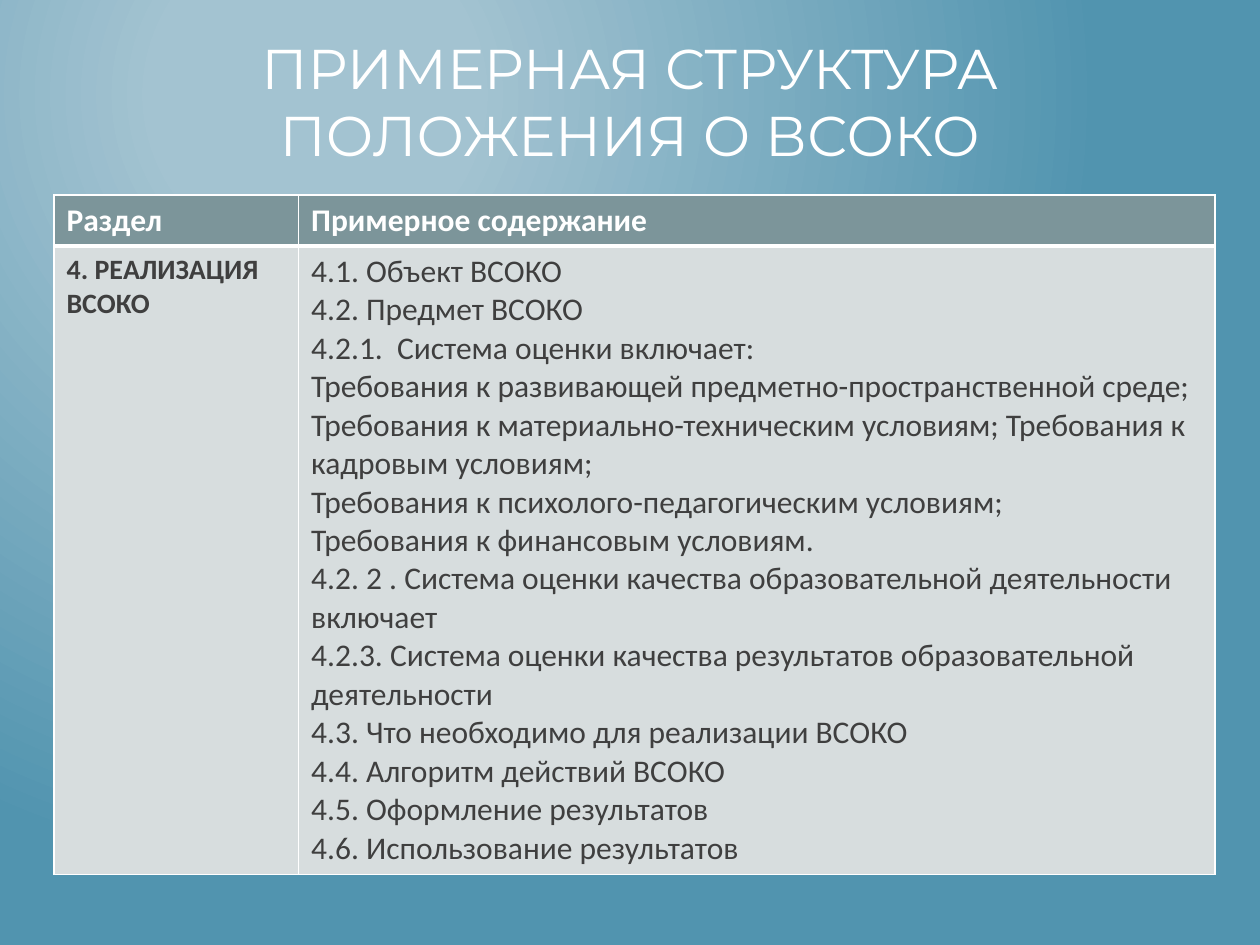
"""Builds a slide with a title and a table outlining one section of a regulation."""
from pptx import Presentation
from pptx.dml.color import RGBColor
from pptx.enum.text import MSO_ANCHOR, MSO_AUTO_SIZE, PP_ALIGN
from pptx.oxml import parse_xml
from pptx.oxml.ns import nsdecls
from pptx.util import Cm, Pt

COLORS = {
    "white": "FFFFFF",
    "header": "7C959A",
    "body": "D7DDDE",
    "text": "3F3F3F",
    "glow": "A3C3D1",
    "edge": "5194AF",
}
HEADERS = ["Раздел", "Примерное содержание"]
SECTION = ["4. РЕАЛИЗАЦИЯ ", "ВСОКО"]
CONTENTS = [
    "4.1. Объект ВСОКО",
    "4.2. Предмет ВСОКО",
    "4.2.1.  Система оценки включает:",
    "Требования к развивающей предметно-пространственной среде;",
    "Требования к материально-техническим условиям; Требования к кадровым условиям;",
    "Требования к психолого-педагогическим условиям;",
    "Требования к финансовым условиям.",
    "4.2. 2 . Система оценки качества образовательной деятельности включает",
    "4.2.3. Система оценки качества результатов образовательной деятельности",
    "4.3. Что необходимо для реализации ВСОКО",
    "4.4. Алгоритм действий ВСОКО",
    "4.5. Оформление результатов",
    "4.6. Использование результатов",
]


def write(tf, lines, size, color, font="Calibri", bold=False, align=PP_ALIGN.LEFT):
    for i, line in enumerate(lines):
        p = tf.add_paragraph() if i else tf.paragraphs[0]
        p.alignment = align
        r = p.add_run()
        r.text = line
        r.font.size = Pt(size)
        r.font.name = font
        r.font.bold = bold
        r.font.color.rgb = RGBColor.from_string(COLORS[color])


def style_cell(cell, fill, bottom):
    cell.fill.solid()
    cell.fill.fore_color.rgb = RGBColor.from_string(COLORS[fill])
    tc_pr = cell._tc.get_or_add_tcPr()
    widths = {"lnL": 1, "lnR": 1, "lnT": 1, "lnB": bottom}
    for i, (tag, width) in enumerate(widths.items()):
        tc_pr.insert(i, parse_xml(
            f'<a:{tag} {nsdecls("a")} w="{Pt(width)}"><a:solidFill>'
            f'<a:srgbClr val="{COLORS["white"]}"/></a:solidFill></a:{tag}>'))


prs = Presentation()
prs.slide_width, prs.slide_height = Cm(25.4), Cm(19.05)
s = prs.slides.add_slide(prs.slide_layouts[5])

s.background.fill.gradient()
grad = s.element.xpath(".//p:bg//a:gradFill")[0]
grad.getparent().replace(grad, parse_xml(
    f'<a:gradFill {nsdecls("a")} rotWithShape="1"><a:gsLst>'
    f'<a:gs pos="20000"><a:srgbClr val="{COLORS["glow"]}"/></a:gs>'
    f'<a:gs pos="100000"><a:srgbClr val="{COLORS["edge"]}"/></a:gs></a:gsLst>'
    '<a:path path="circle"><a:fillToRect l="50000" t="20000" r="100000" b="100000"/>'
    '</a:path></a:gradFill>'))

sp = s.shapes.title
sp.left, sp.top, sp.width, sp.height = Cm(0.9), Cm(0.53), Cm(23.6), Cm(3)
tf = sp.text_frame
tf.word_wrap = True
tf.auto_size = MSO_AUTO_SIZE.NONE
tf.vertical_anchor = MSO_ANCHOR.MIDDLE
write(tf, ["ПРИМЕРНАЯ СТРУКТУРА ПОЛОЖЕНИЯ О ВСОКО"], 32, "white",
      font="Montserrat", align=PP_ALIGN.CENTER)

table = s.shapes.add_table(2, 2, Cm(1.09), Cm(3.93), Cm(23.4), Cm(13.69)).table
for column, width in zip(table.columns, (4.93, 18.47)):
    column.width = Cm(width)
for row, height in zip(table.rows, (1.02, 12.67)):
    row.height = Cm(height)

for cell, header in zip(table.rows[0].cells, HEADERS):
    style_cell(cell, "header", 3)
    write(cell.text_frame, [header], 18, "white", bold=True)
for cell in table.rows[1].cells:
    style_cell(cell, "body", 1)
write(table.cell(1, 0).text_frame, SECTION, 16, "text", bold=True)
write(table.cell(1, 1).text_frame, CONTENTS, 18, "text")

prs.save("out.pptx")
